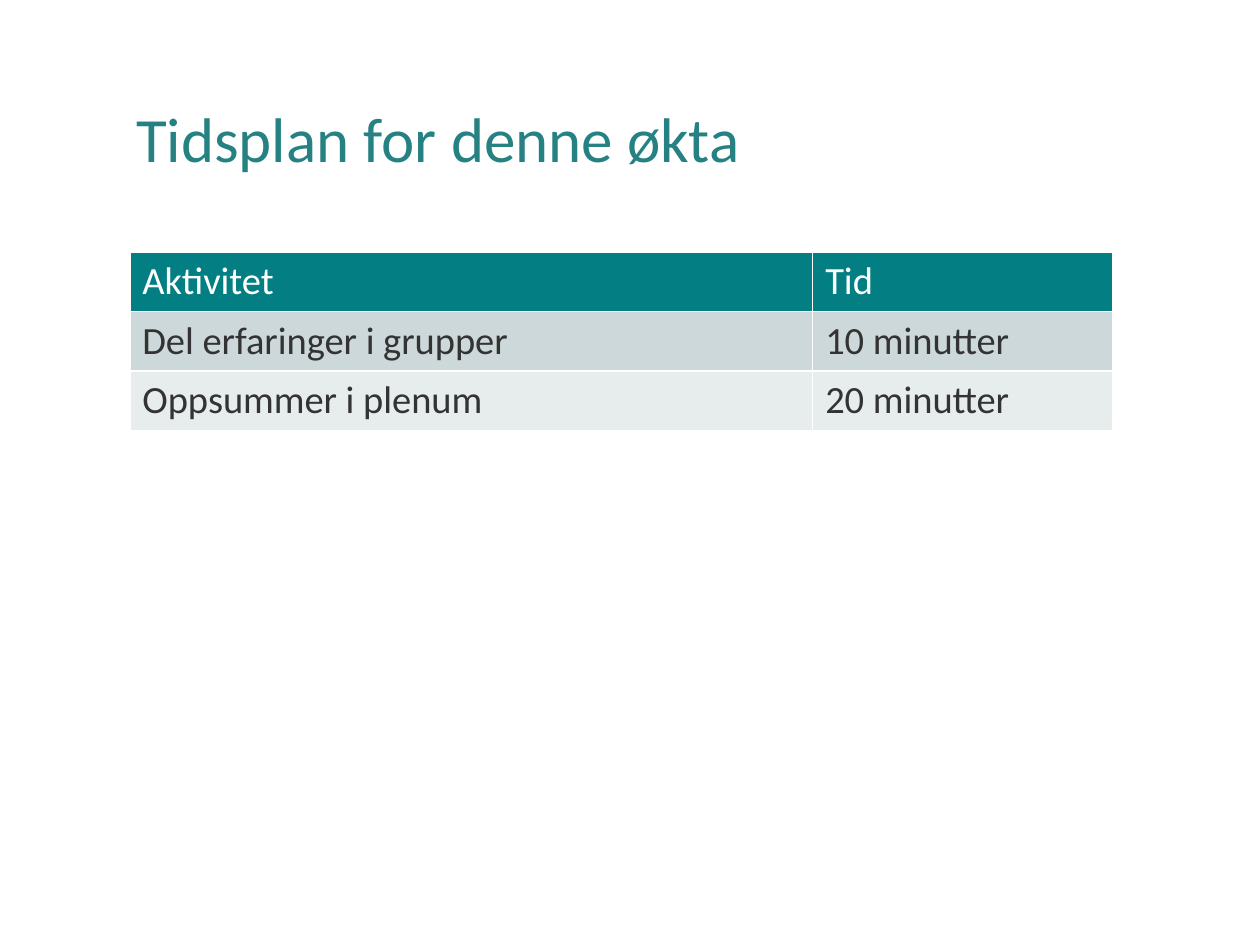
"""Build a slide with the timetable for a session."""
from pptx import Presentation
from pptx.dml.color import RGBColor
from pptx.enum.text import MSO_ANCHOR, PP_ALIGN
from pptx.util import Inches, Pt

LEFT = PP_ALIGN.LEFT
MIDDLE = MSO_ANCHOR.MIDDLE

TITLE = "Tidsplan for denne økta"
ROWS = [
    ("Aktivitet", "Tid"),
    ("Del erfaringer i grupper", "10 minutter"),
    ("Oppsummer i plenum", "20 minutter"),
]
COLORS = {
    "title": "268183",
    "header": "037F83",
    "header_text": "FFFFFF",
    "odd_row": "CCD8D9",
    "even_row": "E7ECED",
    "row_text": "333333",
}
ROW_STYLES = [
    ("header", "header_text"),
    ("odd_row", "row_text"),
    ("even_row", "row_text"),
]
FONT = "Calibri"
COLUMN_WIDTHS = (5.42, 2.38)
ROW_HEIGHT = 0.47
TABLE_LEFT, TABLE_TOP = 1.03, 2


def style_paragraph(paragraph, size, color):
    paragraph.alignment = LEFT
    paragraph.font.name = FONT
    paragraph.font.size = Pt(size)
    paragraph.font.bold = False
    paragraph.font.color.rgb = RGBColor.from_string(COLORS[color])


def add_title(page):
    title = page.shapes.title
    title.left, title.top = Inches(0.98), Inches(0.4)
    title.width, title.height = Inches(8.29), Inches(1.45)
    title.text_frame.text = TITLE
    title.text_frame.vertical_anchor = MIDDLE
    paragraph = title.text_frame.paragraphs[0]
    paragraph.line_spacing = 0.9
    style_paragraph(paragraph, 36, "title")


def add_timetable(page):
    table = page.shapes.add_table(
        len(ROWS), len(COLUMN_WIDTHS), Inches(TABLE_LEFT), Inches(TABLE_TOP),
        Inches(sum(COLUMN_WIDTHS)), Inches(ROW_HEIGHT * len(ROWS)),
    ).table
    for column, width in zip(table.columns, COLUMN_WIDTHS):
        column.width = Inches(width)
    for row, texts, (fill, text_color) in zip(table.rows, ROWS, ROW_STYLES):
        row.height = Inches(ROW_HEIGHT)
        for cell, text in zip(row.cells, texts):
            cell.text = text
            cell.fill.solid()
            cell.fill.fore_color.rgb = RGBColor.from_string(COLORS[fill])
            style_paragraph(cell.text_frame.paragraphs[0], 22, text_color)


def main():
    deck = Presentation()
    deck.slide_width, deck.slide_height = Inches(10), Inches(7.5)
    page = deck.slides.add_slide(deck.slide_layouts.get_by_name("Title Only"))
    add_title(page)
    add_timetable(page)
    deck.save("out.pptx")


if __name__ == "__main__":
    main()
